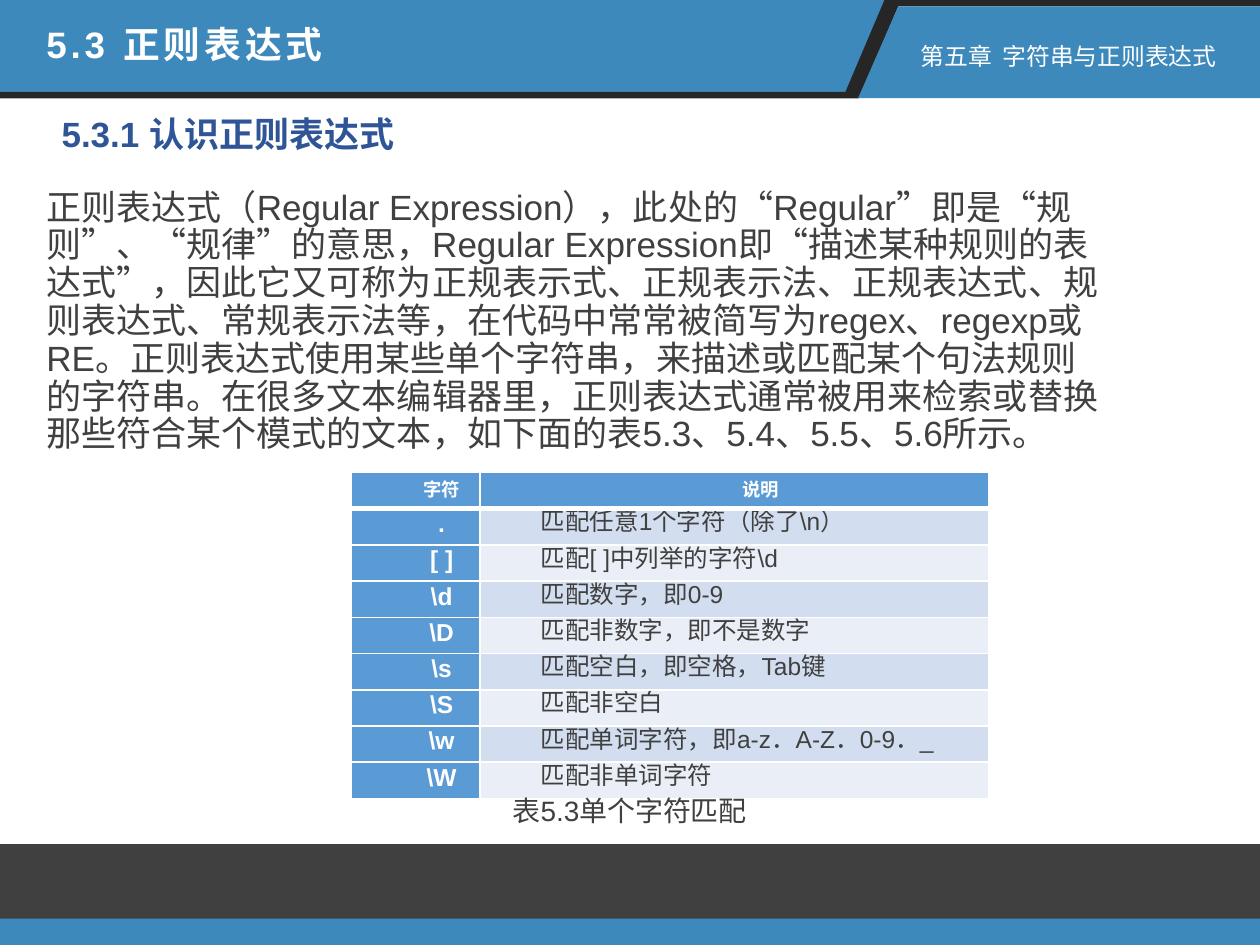
from lxml import etree
from pptx import Presentation
from pptx import util as u
from pptx.dml.color import RGBColor
from pptx.enum import shapes, text
from pptx.oxml.ns import qn

COLORS = {
    "blue": "3D89BC", "black": "262626", "gray": "404040", "white": "FFFFFF",
    "heading": "2F5597", "key": "5B9BD5", "odd": "D2DEEF", "even": "EAEFF7",
}
FONT = "Arial"
INTRO = (
    "正则表达式（Regular Expression），此处的“Regular”即是“规则”、“规律”的意思，"
    "Regular Expression即“描述某种规则的表达式”，因此它又可称为正规表示式、正规表示法、"
    "正规表达式、规则表达式、常规表示法等，在代码中常常被简写为regex、regexp或RE。"
    "正则表达式使用某些单个字符串，来描述或匹配某个句法规则的字符串。"
    "在很多文本编辑器里，正则表达式通常被用来检索或替换那些符合某个模式的文本，"
    "如下面的表5.3、5.4、5.5、5.6所示。"
)
ROWS = [
    ("字符", "说明"),
    (".", "匹配任意1个字符（除了\\n）"),
    ("[ ]", "匹配[ ]中列举的字符\\d"),
    ("\\d", "匹配数字，即0-9"),
    ("\\D", "匹配非数字，即不是数字"),
    ("\\s", "匹配空白，即空格，Tab键"),
    ("\\S", "匹配非空白"),
    ("\\w", "匹配单词字符，即a-z．A-Z．0-9．_"),
    ("\\W", "匹配非单词字符"),
]


def rgb(name):
    return RGBColor.from_string(COLORS[name])


def paint(shape, color):
    shape.shadow.inherit = False
    shape.fill.solid()
    shape.fill.fore_color.rgb = rgb(color)
    shape.line.fill.background()


def add_outline(page, points, color):
    corners = [(u.Inches(x), u.Inches(y)) for x, y in points]
    builder = page.shapes.build_freeform(*corners[0], scale=1.0)
    builder.add_line_segments(corners[1:], close=True)
    paint(builder.convert_to_shape(), color)


def add_band(page, top, height, color):
    band = page.shapes.add_shape(shapes.MSO_SHAPE.RECTANGLE, 0, u.Inches(top),
                                 u.Inches(10), u.Inches(height))
    paint(band, color)


def add_box(page, left, top, width, height):
    box = page.shapes.add_textbox(*map(u.Inches, (left, top, width, height)))
    box.text_frame.word_wrap = True
    return box.text_frame


def add_span(para, words, size, color, bold=False):
    span = para.add_run()
    span.text = words
    span.font.name = FONT
    span.font.size = u.Pt(size)
    span.font.bold = bold
    span.font.color.rgb = rgb(color)
    return span


def set_indent(para, margin, first):
    props = para._p.get_or_add_pPr()
    props.set("marL", str(u.Inches(margin)))
    props.set("indent", str(u.Inches(first)))


def set_borders(cell, bottom_width):
    props = cell._tc.get_or_add_tcPr()
    widths = {"a:lnL": 1, "a:lnR": 1, "a:lnT": 1, "a:lnB": bottom_width}
    for position, (tag, width) in enumerate(widths.items()):
        line = etree.Element(qn(tag), w=str(u.Pt(width)))
        fill = etree.SubElement(line, qn("a:solidFill"))
        etree.SubElement(fill, qn("a:srgbClr"), val=COLORS["white"])
        props.insert(position, line)


def fill_cell(cell, words, row, column):
    header, key = row == 0, column == 0
    strong = header or key
    cell.fill.solid()
    cell.fill.fore_color.rgb = rgb("key" if strong else "odd" if row % 2 else "even")
    cell.margin_left = cell.margin_right = u.Inches(0.07)
    cell.margin_top = cell.margin_bottom = 0
    # The rule under the header is thick, also seen from the row below
    set_borders(cell, 3 if header else 1)
    if row == 1:
        cell._tc.tcPr.find(qn("a:lnT")).set("w", str(u.Pt(3)))
    para = cell.text_frame.paragraphs[0]
    para.alignment = text.PP_ALIGN.CENTER if strong else text.PP_ALIGN.JUSTIFY
    para.line_spacing = u.Pt(16.7)
    set_indent(para, 0.12, 0.29)
    add_span(para, words, 10.5 if header else 14, "white" if strong else "gray", strong)


def add_symbol_table(page):
    frame = page.shapes.add_table(len(ROWS), 2, u.Inches(2.79), u.Inches(3.75),
                                  u.Inches(5.06), u.Inches(2.59))
    table = frame.table
    for column, width in zip(table.columns, (1.02, 4.04)):
        column.width = u.Inches(width)
    for row, entries in enumerate(ROWS):
        for column, words in enumerate(entries):
            fill_cell(table.cell(row, column), words, row, column)


def add_frame(page):
    add_outline(page, [(0, 0), (7.05, 0), (6.74, 0.73), (0, 0.73)], "blue")
    add_outline(page, [(7.02, 0), (10, 0), (10, 0.05), (7.13, 0.05), (6.82, 0.78),
                       (0, 0.78), (0, 0.73), (6.71, 0.73)], "black")
    add_outline(page, [(7.13, 0.05), (10, 0.05), (10, 0.78), (6.81, 0.78)], "blue")
    add_band(page, 6.7, 0.6, "gray")
    add_band(page, 7.29, 0.21, "blue")


def add_body(page):
    frame = add_box(page, 0.27, 0.95, 8.62, 5.83)
    heading = frame.paragraphs[0]
    heading.line_spacing = u.Pt(16.5)
    heading.space_before = heading.space_after = u.Pt(10)
    set_indent(heading, 0.12, 0)
    add_span(heading, "5.3.1 认识正则表达式", 20, "heading", True)
    intro = frame.add_paragraph()
    intro.line_spacing = 0.9
    intro.space_before = u.Pt(10)
    add_span(intro, INTRO, 20, "gray")


def main():
    deck = Presentation()
    deck.slide_width, deck.slide_height = u.Inches(10), u.Inches(7.5)
    page = deck.slides.add_slide(deck.slide_layouts[6])

    # Header and footer bands
    add_frame(page)

    # Section heading and introduction
    add_body(page)

    # Header titles
    title = add_box(page, 0.27, 0.12, 3.91, 0.45).paragraphs[0]
    span = add_span(title, "5.3 正则表达式", 21, "white", True)
    span.font._element.set("spc", "220")
    chapter = add_box(page, 7.21, 0.28, 2.79, 0.33).paragraphs[0]
    add_span(chapter, "第五章  字符串与正则表达式", 13.6, "white")

    # Table of symbols with its caption
    add_symbol_table(page)
    caption = add_box(page, 3.68, 6.25, 2.74, 0.35).paragraphs[0]
    set_indent(caption, 0, 0.29)
    add_span(caption, "表5.3单个字符匹配", 16, "gray")

    deck.save("out.pptx")


if __name__ == "__main__":
    main()
